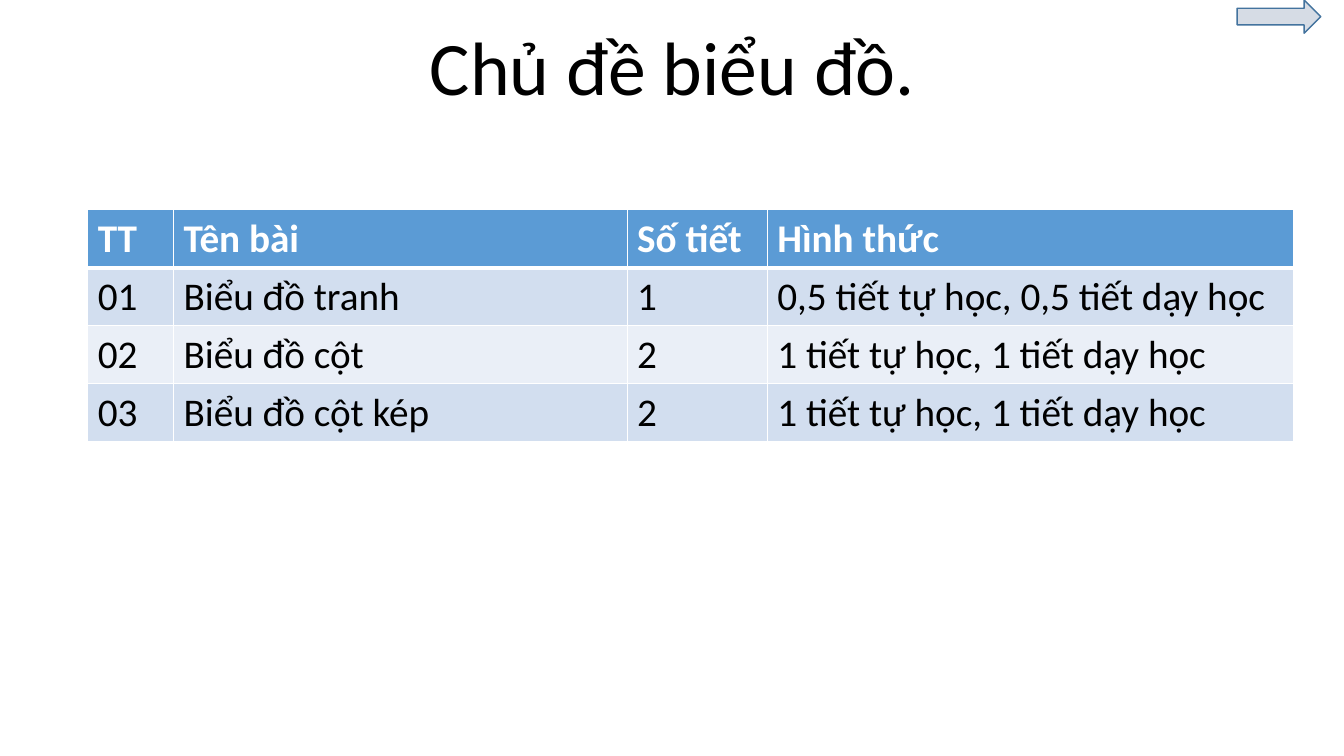
"""Build a slide that lists the lessons of the chart topic."""
from dataclasses import dataclass

from lxml import etree
from pptx import Presentation
from pptx.dml.color import RGBColor
from pptx.enum.shapes import MSO_SHAPE
from pptx.enum.text import MSO_ANCHOR, MSO_AUTO_SIZE, PP_ALIGN
from pptx.oxml.ns import qn
from pptx.util import Inches, Pt

ARROW = MSO_SHAPE.RIGHT_ARROW
BOTTOM = MSO_ANCHOR.BOTTOM
FIXED = MSO_AUTO_SIZE.NONE
LEFT, CENTER = PP_ALIGN.LEFT, PP_ALIGN.CENTER


@dataclass(frozen=True)
class Theme:
    font: str = "Calibri"
    title: int = 54
    body: int = 28
    ink: str = "000000"
    white: str = "FFFFFF"
    head: str = "5B9BD5"
    bands: tuple = ("EAEFF7", "D2DEEF")
    arrow: str = "D6DCE5"
    edge: str = "43739E"


THEME = Theme()


def write(frame, text, size=THEME.body, color=THEME.ink, bold=False,
          align=LEFT, space=1.0):
    para = frame.paragraphs[0]
    para.alignment = align
    para.line_spacing = space
    run = para.add_run()
    run.text = text
    run.font.name = THEME.font
    run.font.size = Pt(size)
    run.font.bold = bold
    run.font.color.rgb = RGBColor.from_string(color)


def border(cell, side, width):
    props = cell._tc.get_or_add_tcPr()
    line = etree.SubElement(props, qn(f"a:ln{side}"), w=str(Pt(width)))
    fill = etree.SubElement(line, qn("a:solidFill"))
    etree.SubElement(fill, qn("a:srgbClr"), val=THEME.white)


deck = Presentation()
deck.slide_width = Inches(13.33)
deck.slide_height = Inches(7.5)
slide = deck.slides.add_slide(deck.slide_layouts[0])
extra = slide.placeholders[1].element
extra.getparent().remove(extra)

title = slide.shapes.title
title.left, title.top = Inches(1.67), Inches(0.17)
title.width, title.height = Inches(10), Inches(0.99)
title.text_frame.auto_size = FIXED
title.text_frame.vertical_anchor = BOTTOM
write(title.text_frame, "Chủ đề biểu đồ.", size=THEME.title, align=CENTER,
      space=0.9)

rows = [
    ("TT", "Tên bài", "Số tiết", "Hình thức"),
    ("01", "Biểu đồ tranh", "1", "0,5 tiết tự học, 0,5 tiết dạy học"),
    ("02", "Biểu đồ cột", "2", "1 tiết tự học, 1 tiết dạy học"),
    ("03", "Biểu đồ cột kép", "2", "1 tiết tự học, 1 tiết dạy học"),
]
widths = [0.85, 4.5, 1.39, 5.22]
table = slide.shapes.add_table(
    len(rows), len(widths), Inches(0.87), Inches(2.08),
    Inches(sum(widths)), Inches(2.27)).table
for col, width in zip(table.columns, widths):
    col.width = Inches(width)

for r, row in enumerate(rows):
    first = r == 0
    shade = THEME.head if first else THEME.bands[r % 2]
    for c, text in enumerate(row):
        cell = table.cell(r, c)
        write(cell.text_frame, text, bold=first,
              color=THEME.white if first else THEME.ink)
        for side in "LRTB":
            thick = (r, side) in ((0, "B"), (1, "T"))
            border(cell, side, 3 if thick else 1)
        cell.fill.solid()
        cell.fill.fore_color.rgb = RGBColor.from_string(shade)

arrow = slide.shapes.add_shape(
    ARROW, Inches(12.27), Inches(0), Inches(0.83), Inches(0.33))
arrow.shadow.inherit = False
arrow.fill.solid()
arrow.fill.fore_color.rgb = RGBColor.from_string(THEME.arrow)
arrow.line.color.rgb = RGBColor.from_string(THEME.edge)
arrow.line.width = Pt(1)

deck.save("out.pptx")
